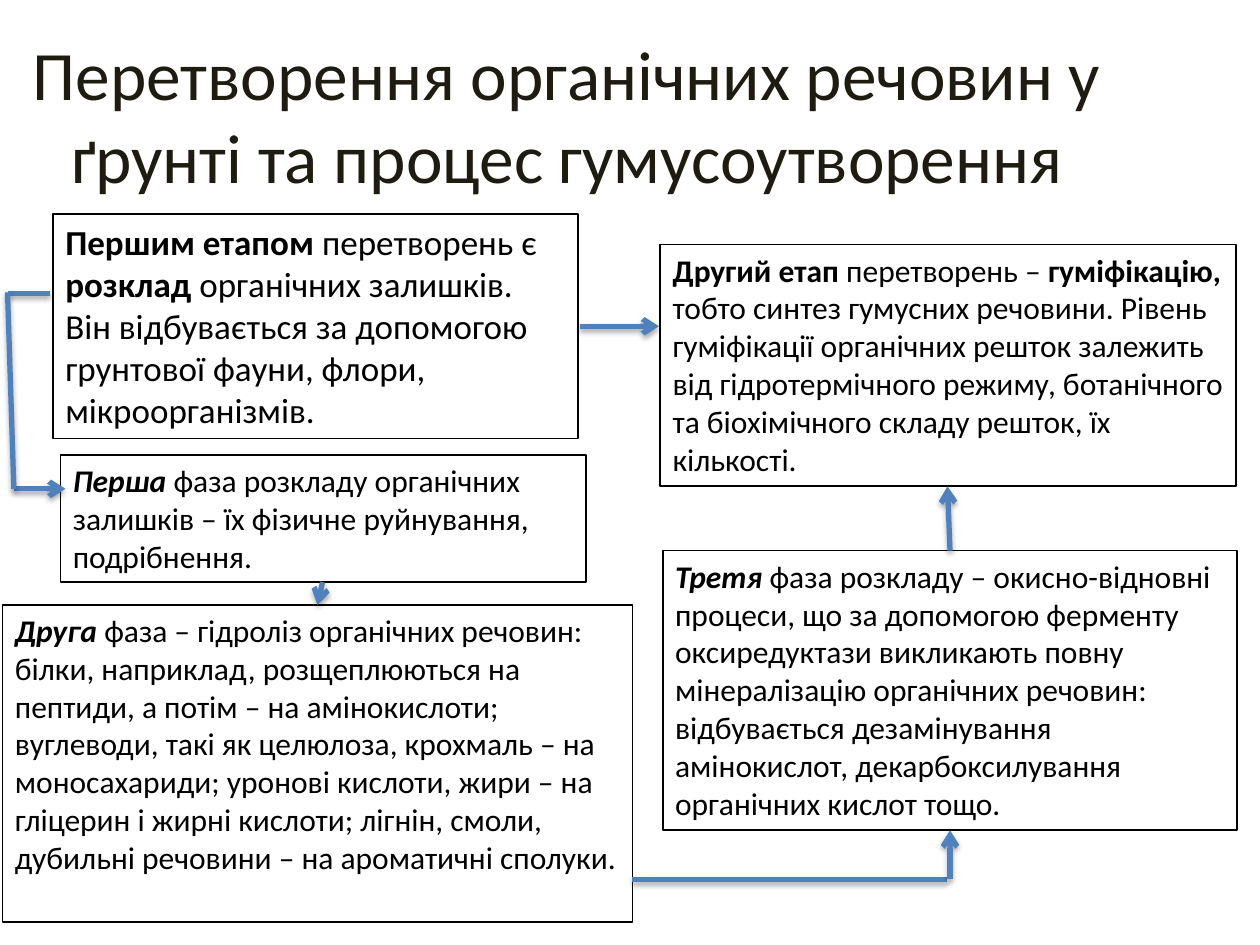
import lxml.etree
import pptx
import pptx.dml.color
import pptx.enum.shapes
import pptx.enum.text
import pptx.oxml.ns
import pptx.util

WIDE, HIGH = 10, 7.5
FONT = "Calibri"
HUES = {"title": "1E1C11", "text": "000000", "edge": "000000",
        "link": "4F81BD", "shade": "000000"}
TITLE = "Перетворення органічних речовин у ґрунті та процес гумусоутворення"

BOXES = [
    ((4.2, 22.67, 41.7, 23.73), 20, [
        ("Першим етапом ", "b"), ("перетворень є ", ""), ("розклад", "b"),
        (" органічних залишків. Він відбувається за допомогою грунтової "
         "фауни, флори, мікроорганізмів.", "")]),
    ((52.4, 25.87, 45.7, 25.6), 18, [
        ("Другий етап ", "b"), ("перетворень – ", ""), ("гуміфікацію, ", "b"),
        ("тобто синтез гумусних речовини. Рівень гуміфікації органічних "
         "решток залежить від гідротермічного режиму, ботанічного та "
         "біохімічного складу решток, їх кількості.", "")]),
    ((4.8, 48.13, 41.7, 13.47), 18, [
        ("Перша ", "bi"),
        ("фаза розкладу органічних залишків – їх фізичне руйнування, "
         "подрібнення.", "")]),
    ((0.2, 64, 50, 33.6), 18, [
        ("Друга ", "bi"),
        ("фаза – гідроліз органічних речовин: білки, наприклад, "
         "розщеплюються на пептиди, а потім – на амінокислоти; вуглеводи, "
         "такі як целюлоза, крохмаль – на моносахариди; уронові кислоти, "
         "жири – на гліцерин і жирні кислоти; лігнін, смоли, дубильні "
         "речовини – на ароматичні сполуки.", "")]),
    ((52.6, 58.27, 45.6, 29.6), 18, [
        ("Третя ", "bi"),
        ("фаза розкладу – окисно-відновні процеси, що за допомогою ферменту "
         "оксиредуктази викликають повну мінералізацію органічних речовин: "
         "відбувається дезамінування амінокислот, декарбоксилування "
         "органічних кислот тощо.", "")]),
]

LINKS = [
    ((1.1, 51.73, 5.2, 51.73), True),
    ((4, 31.07, 0.6, 31.07), False),
    ((0.6, 30.93, 1.1, 51.73), False),
    ((25.6, 61.6, 25.2, 64), True),
    ((50.2, 93.07, 75.2, 93.07), False),
    ((75.4, 93.07, 75.4, 87.87), True),
    ((75.4, 58.27, 75.2, 51.47), True),
    ((46, 34.53, 52.3, 34.53), True),
]


def tint(name):
    """Return the named colour."""
    return pptx.dml.color.RGBColor.from_string(HUES[name])


def scale(shares):
    """Turn percent shares of slide width and height into lengths."""
    sides = (WIDE, HIGH, WIDE, HIGH)
    return [pptx.util.Inches(share * side / 100)
            for share, side in zip(shares, sides)]


def style(part, size, hue):
    """Set the font of a paragraph."""
    part.font.name = FONT
    part.font.size = pptx.util.Pt(size)
    part.font.color.rgb = tint(hue)


def add_title(slide):
    """Place and fill the title."""
    title = slide.shapes.title
    title.left, title.top, title.width, title.height = scale(
        (0, 3.73, 90, 16.67))
    frame = title.text_frame
    frame.text = TITLE
    frame.auto_size = pptx.enum.text.MSO_AUTO_SIZE.NONE
    frame.vertical_anchor = pptx.enum.text.MSO_ANCHOR.MIDDLE
    part = frame.paragraphs[0]
    part.alignment = pptx.enum.text.PP_ALIGN.CENTER
    style(part, 39.6, "title")


def add_box(slide, shares, size, runs):
    """Add a framed text box with runs marked bold or italic."""
    box = slide.shapes.add_textbox(*scale(shares))
    box.line.color.rgb = tint("edge")
    box.line.width = pptx.util.Pt(1)
    frame = box.text_frame
    frame.word_wrap = True
    part = frame.paragraphs[0]
    style(part, size, "text")
    for text, marks in runs:
        run = part.add_run()
        run.text = text
        run.font.name = FONT
        run.font.size = pptx.util.Pt(size)
        run.font.color.rgb = tint("text")
        run.font.bold = "b" in marks
        run.font.italic = "i" in marks


def add_node(root, tag, **attrs):
    """Append a drawing element to its parent."""
    return lxml.etree.SubElement(root, pptx.oxml.ns.qn(tag), attrs)


def add_link(slide, shares, arrow):
    """Add a shadowed line, with an arrowhead if asked."""
    kind = pptx.enum.shapes.MSO_CONNECTOR.STRAIGHT
    link = slide.shapes.add_connector(kind, *scale(shares))
    link.line.color.rgb = tint("link")
    link.line.width = pptx.util.Pt(3)
    props = link.element.spPr
    if arrow:
        add_node(props.find(pptx.oxml.ns.qn("a:ln")), "a:tailEnd", type="arrow")
    shade = add_node(add_node(props, "a:effectLst"), "a:outerShdw",
                     blurRad="40000", dist="23000", dir="5400000",
                     rotWithShape="0")
    hue = add_node(shade, "a:srgbClr", val=HUES["shade"])
    add_node(hue, "a:alpha", val="35000")


def main():
    """Build and save the slide."""
    deck = pptx.Presentation()
    deck.slide_width = pptx.util.Inches(WIDE)
    deck.slide_height = pptx.util.Inches(HIGH)
    slide = deck.slides.add_slide(deck.slide_layouts[5])
    add_title(slide)
    for shares, size, runs in BOXES:
        add_box(slide, shares, size, runs)
    for shares, arrow in LINKS:
        add_link(slide, shares, arrow)
    deck.save("out.pptx")


if __name__ == "__main__":
    main()
